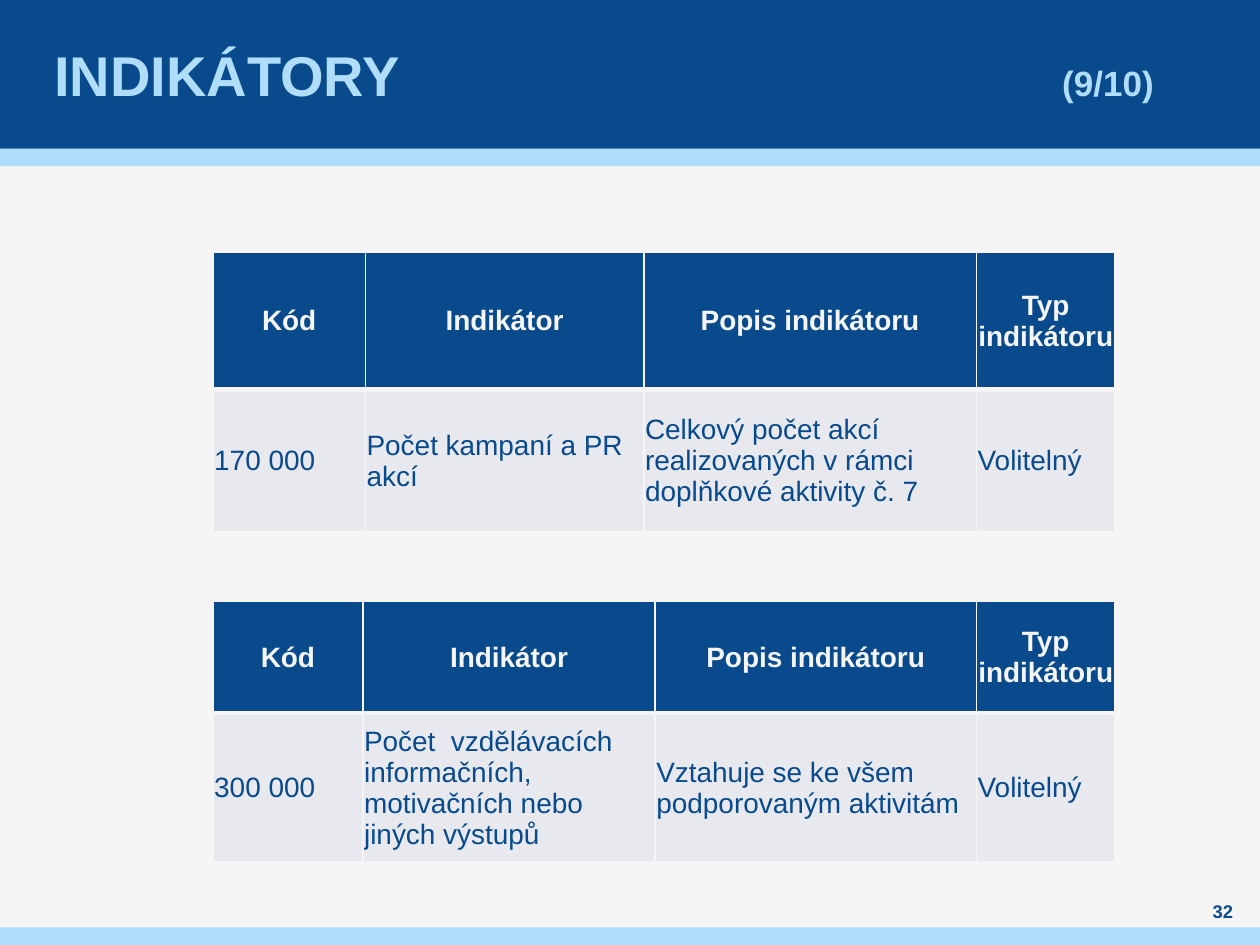
"""Build the indicator slide with its two tables."""
from dataclasses import dataclass

from lxml import etree
from pptx import Presentation
from pptx.dml.color import RGBColor
from pptx.enum.shapes import MSO_SHAPE
from pptx.enum.text import MSO_ANCHOR, PP_ALIGN
from pptx.oxml.ns import qn
from pptx.util import Inches, Pt

RECTANGLE = MSO_SHAPE.RECTANGLE
MIDDLE = MSO_ANCHOR.MIDDLE
LEFT, CENTER, JUSTIFY = PP_ALIGN.LEFT, PP_ALIGN.CENTER, PP_ALIGN.JUSTIFY
GRID_COLUMNS, GRID_ROWS = 100, 75


@dataclass(frozen=True)
class Theme:
    font: str = "Arial"
    navy: str = "084A8B"
    sky: str = "AFDDFA"
    paper: str = "F5F5F5"
    cell: str = "E7E9EE"
    title: float = 32
    counter: float = 20
    table: float = 16
    number: float = 10.5
    thin: float = 1
    thick: float = 3


theme = Theme()
presentation = Presentation()
presentation.slide_width, presentation.slide_height = Inches(10), Inches(7.5)
column = presentation.slide_width // GRID_COLUMNS
row = presentation.slide_height // GRID_ROWS
slide = presentation.slides.add_slide(presentation.slide_layouts[6])
slide.background.fill.solid()
slide.background.fill.fore_color.rgb = RGBColor.from_string(theme.paper)


def add_run(paragraph, text, size, color, bold=True):
    run = paragraph.add_run()
    run.text = text
    run.font.name, run.font.size, run.font.bold = theme.font, Pt(size), bold
    run.font.color.rgb = RGBColor.from_string(color)


def add_text_box(left, top, width, height, margin=0):
    box = slide.shapes.add_textbox(
        round(left * column), round(top * row), round(width * column), round(height * row)
    )
    frame = box.text_frame
    frame.word_wrap, frame.vertical_anchor = True, MIDDLE
    frame.margin_left = frame.margin_right = round(margin * column)
    frame.margin_top = frame.margin_bottom = 0
    return frame.paragraphs[0]


header_rows, stripe_rows = 11.8, 1.4
bands = [
    (header_rows, stripe_rows, theme.sky),
    (0, header_rows, theme.navy),
    (GRID_ROWS - stripe_rows, stripe_rows, theme.sky),
]
for top, height, color in bands:
    band = slide.shapes.add_shape(
        RECTANGLE, 0, round(top * row), presentation.slide_width, round(height * row)
    )
    band.shadow.inherit = False
    band.fill.solid()
    band.fill.fore_color.rgb = RGBColor.from_string(color)
    band.line.fill.background()

title = add_text_box(3.9, 0, 92.1, header_rows, margin=0.4)
tab_list = etree.SubElement(title._p.get_or_add_pPr(), qn("a:tabLst"))
etree.SubElement(tab_list, qn("a:tab"), pos=str(80 * column), algn="l")
add_run(title, "INDIKÁTORY\t", theme.title, theme.sky)
add_run(title, "(9/10)", theme.counter, theme.sky)

headings = ["Kód", "Indikátor", "Popis indikátoru", "Typ indikátoru"]
tables = [
    (20, [12.1, 22.1, 26.4, 11], [10.9, 11.3], [
        "170 000",
        "Počet kampaní a PR akcí",
        "Celkový počet akcí realizovaných v rámci doplňkové aktivity č. 7",
        "Volitelný",
    ]),
    (47.7, [11.9, 23.2, 25.5, 11], [8.9, 11.8], [
        "300 000",
        "Počet  vzdělávacích informačních, motivačních nebo jiných výstupů",
        "Vztahuje se ke všem podporovaným aktivitám",
        "Volitelný",
    ]),
]
heading_style = (theme.navy, theme.paper, True, [CENTER] * 4, theme.thin, theme.thick)
value_style = (theme.cell, theme.navy, False, [JUSTIFY, LEFT, LEFT, JUSTIFY], theme.thick, theme.thin)

for top, widths, heights, values in tables:
    table = slide.shapes.add_table(
        len(heights), len(widths), round(16.9 * column), round(top * row),
        round(sum(widths) * column), round(sum(heights) * row),
    ).table
    for table_column, width in zip(table.columns, widths):
        table_column.width = round(width * column)
    for table_row, height, texts, style in zip(
        table.rows, heights, (headings, values), (heading_style, value_style)
    ):
        table_row.height = round(height * row)
        fill, color, bold, alignments, top_line, bottom_line = style
        borders = {"lnL": theme.thin, "lnR": theme.thin, "lnT": top_line, "lnB": bottom_line}
        for cell, text, alignment in zip(table_row.cells, texts, alignments):
            cell.margin_left = cell.margin_right = cell.margin_top = round(0.1 * column)
            cell.margin_bottom = 0
            cell.vertical_anchor = MIDDLE
            properties = cell._tc.get_or_add_tcPr()
            for side, weight in borders.items():
                line = etree.SubElement(properties, qn(f"a:{side}"), w=str(Pt(weight)))
                line_fill = etree.SubElement(line, qn("a:solidFill"))
                etree.SubElement(line_fill, qn("a:srgbClr"), val=theme.paper)
            cell.fill.solid()
            cell.fill.fore_color.rgb = RGBColor.from_string(fill)
            paragraph = cell.text_frame.paragraphs[0]
            paragraph.alignment = alignment
            add_run(paragraph, text, theme.table, color, bold)

number = add_text_box(94.5, 71.3, 5.1, 2)
number.alignment = CENTER
add_run(number, "32", theme.number, theme.navy)

presentation.save("out.pptx")
